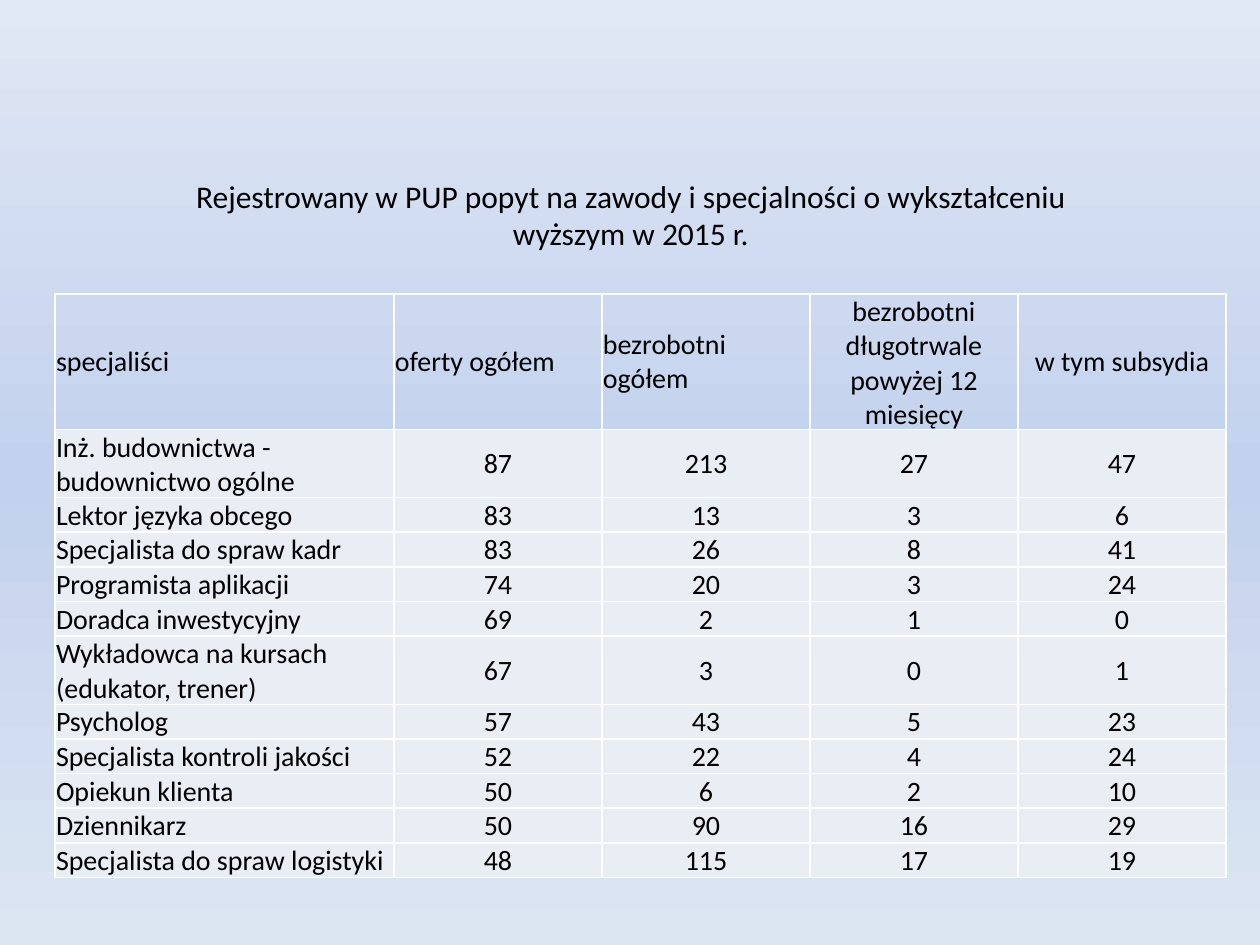
from copy import deepcopy
from lxml import etree
from pptx import Presentation
from pptx.dml.color import RGBColor
from pptx.enum.text import MSO_ANCHOR, PP_ALIGN
from pptx.oxml.ns import qn
from pptx.util import Pt

PX = 914400 / 126
LEFT, CENTER = PP_ALIGN.LEFT, PP_ALIGN.CENTER
MIDDLE = MSO_ANCHOR.MIDDLE
FONT = "Calibri"
COLORS = {"text": "000000", "cell": "E9EDF4", "border": "FFFFFF",
          "bottom": "DCE6F2", "middle": "C2D1ED", "top": "E1E8F5"}


def px(n):
    return round(n * PX)


def add_run(p, text, size, align):
    p.alignment = align
    r = p.add_run()
    r.text = text
    r.font.name = FONT
    r.font.size = Pt(size)
    r.font.color.rgb = RGBColor.from_string(COLORS["text"])


prs = Presentation()
prs.slide_width, prs.slide_height = px(1260), px(945)
s = prs.slides.add_slide(prs.slide_layouts[6])

fill = s.background.fill
fill.gradient()
fill.gradient_angle = 90
stops = s.element.find(".//" + qn("a:gsLst"))
stops.append(deepcopy(stops[0]))
for stop, name, position in zip(fill.gradient_stops, ("bottom", "middle", "top"), (0, 0.5, 1)):
    stop.position = position
    stop.color.rgb = RGBColor.from_string(COLORS[name])

title = s.shapes.add_textbox(px(139), px(185), px(984), px(59))
tf = title.text_frame
tf.word_wrap = True
tf.vertical_anchor = MIDDLE
add_run(tf.paragraphs[0],
        "Rejestrowany w PUP popyt na zawody i specjalności o wykształceniu wyższym w 2015 r.",
        18, CENTER)

rows = [
    ("specjaliści", "oferty ogółem", "bezrobotni ogółem",
     "bezrobotni długotrwale powyżej 12 miesięcy", "w tym subsydia"),
    ("Inż. budownictwa - budownictwo ogólne", 87, 213, 27, 47),
    ("Lektor języka obcego", 83, 13, 3, 6),
    ("Specjalista do spraw kadr", 83, 26, 8, 41),
    ("Programista aplikacji", 74, 20, 3, 24),
    ("Doradca inwestycyjny", 69, 2, 1, 0),
    ("Wykładowca na kursach (edukator, trener)", 67, 3, 0, 1),
    ("Psycholog", 57, 43, 5, 23),
    ("Specjalista kontroli jakości", 52, 22, 4, 24),
    ("Opiekun klienta", 50, 6, 2, 10),
    ("Dziennikarz", 50, 90, 16, 29),
    ("Specjalista do spraw logistyki", 48, 115, 17, 19),
]
widths = [339] + [208] * 4
heights = [69] + [24] * 11

frame = s.shapes.add_table(len(rows), len(widths), px(55), px(294), px(sum(widths)), px(580))
table = frame.table
table.first_row = False
table.horz_banding = False
for column, width in zip(table.columns, widths):
    column.width = px(width)
for row, height in zip(table.rows, heights):
    row.height = px(height)
frame.height = px(580)

for i, values in enumerate(rows):
    for j, value in enumerate(values):
        cell = table.cell(i, j)
        cell.vertical_anchor = MIDDLE
        cell.margin_left = cell.margin_top = cell.margin_right = px(1)
        cell.margin_bottom = 0
        tcPr = cell._tc.get_or_add_tcPr()
        for side in ("a:lnL", "a:lnR", "a:lnT", "a:lnB"):
            ln = etree.SubElement(tcPr, qn(side), w=str(Pt(1)))
            solid = etree.SubElement(ln, qn("a:solidFill"))
            etree.SubElement(solid, qn("a:srgbClr"), val=COLORS["border"])
        if i == 0:
            cell.fill.background()
        else:
            cell.fill.solid()
            cell.fill.fore_color.rgb = RGBColor.from_string(COLORS["cell"])
        left_aligned = j == 0 or (i == 0 and j < 3)
        add_run(cell.text_frame.paragraphs[0], str(value), 16, LEFT if left_aligned else CENTER)

prs.save("out.pptx")
